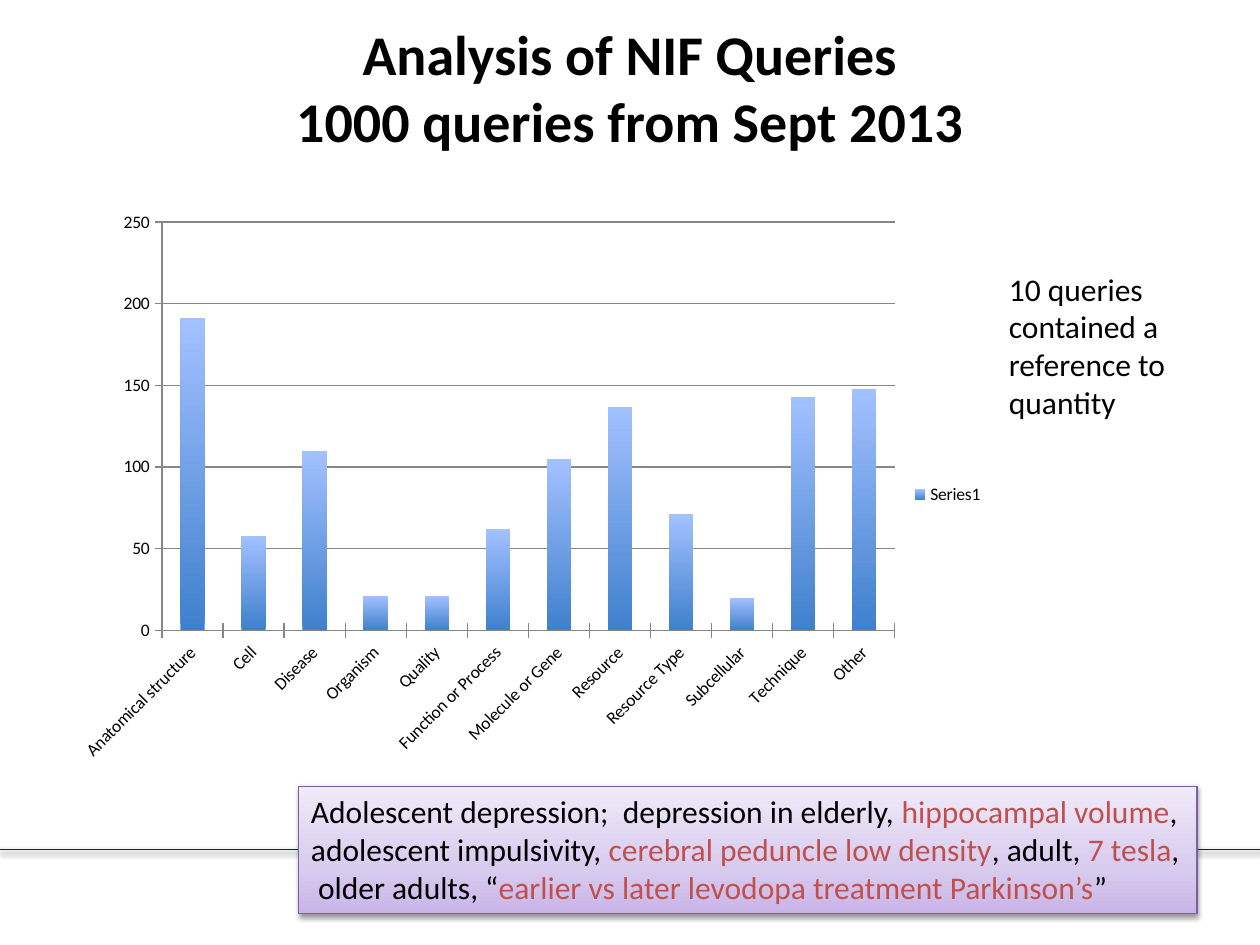
from lxml.etree import SubElement
from pptx import Presentation
from pptx.chart.data import CategoryChartData
from pptx.dml.color import RGBColor
from pptx.enum.chart import XL_CHART_TYPE as ChartType, XL_LEGEND_POSITION as LegendPosition
from pptx.enum.chart import XL_TICK_MARK as TickMark
from pptx.enum.shapes import MSO_CONNECTOR as Connector, MSO_SHAPE as Shape
from pptx.enum.text import MSO_ANCHOR as Anchor, PP_ALIGN as Align
from pptx.oxml import parse_xml
from pptx.oxml.ns import nsdecls, qn
from pptx.util import Cm, Pt

FONT = "Calibri"
COLORS = {"text": "000000", "accent": "C0504D", "rule": "092D33",
          "border": "7D60A0", "grid": "868686"}
BAR_STOPS = [(0, "3F80CD"), (100, "A3C1FF")]
BOX_STOPS = [(0, "C9B5E8"), (35, "D8CBEE"), (100, "F0EAF9")]

TITLE = "Analysis of NIF Queries\v1000 queries from Sept 2013"
NOTE = "10 queries contained a reference to quantity"
EXAMPLES = [
    ("Adolescent depression;  depression in elderly, ", "text"),
    ("hippocampal volume", "accent"),
    (", adolescent impulsivity, ", "text"),
    ("cerebral peduncle low density", "accent"),
    (", adult, ", "text"),
    ("7 tesla", "accent"),
    (",  older adults, “", "text"),
    ("earlier vs later levodopa treatment Parkinson’s", "accent"),
    ("”", "text"),
]
QUERIES = {
    "Anatomical structure": 191, "Cell": 58, "Disease": 110, "Organism": 21,
    "Quality": 21, "Function or Process": 62, "Molecule or Gene": 105,
    "Resource": 137, "Resource Type": 71, "Subcellular": 20,
    "Technique": 143, "Other": 148,
}
PLOT = {"x": 0.106, "y": 0.033, "w": 0.785, "h": 0.7}


def rgb(name):
    return RGBColor.from_string(COLORS[name])


def set_font(font, size, color="text", bold=False):
    formats = {"name": FONT, "size": Pt(size), "bold": bold}
    for attribute, value in formats.items():
        setattr(font, attribute, value)
    font.color.rgb = rgb(color)


def set_line(line, color):
    line.color.rgb = rgb(color)
    line.width = Pt(0.75)


def upward_gradient(stops):
    """Gradient fill whose first stop is at the bottom."""
    marks = "".join(f'<a:gs pos="{position * 1000}"><a:srgbClr val="{color}"/></a:gs>'
                    for position, color in stops)
    return parse_xml(f'<a:gradFill {nsdecls("a")} rotWithShape="1"><a:gsLst>{marks}</a:gsLst>'
                     '<a:lin ang="16200000" scaled="0"/></a:gradFill>')


def add_shadow(properties):
    properties.append(parse_xml(
        f'<a:effectLst {nsdecls("a")}><a:outerShdw blurRad="{Pt(3.1)}" dist="{Pt(1.6)}" '
        'dir="5400000" rotWithShape="0"><a:srgbClr val="000000"><a:alpha val="38000"/>'
        '</a:srgbClr></a:outerShdw></a:effectLst>'))


def write(shape, runs, size, bold=False, align=Align.LEFT, anchor=Anchor.TOP):
    frame = shape.text_frame
    frame.word_wrap = True
    frame.vertical_anchor = anchor
    paragraph = frame.paragraphs[0]
    paragraph.alignment = align
    for index, (text, color) in enumerate(runs):
        for part, line in enumerate(text.split("\v")):
            if part:
                paragraph.add_line_break()
            run = paragraph.add_run()
            run.text = line
            set_font(run.font, size, color, bold)


def add_query_chart(shapes):
    data = CategoryChartData()
    data.categories = list(QUERIES)
    data.add_series("Series1", list(QUERIES.values()))
    chart = shapes.add_chart(ChartType.COLUMN_STACKED, Cm(1.27), Cm(4.09),
                             Cm(18.82), Cm(11.76), data).chart
    set_font(chart.font, 10)
    chart.has_title = False
    chart.has_legend = True
    chart.legend.position = LegendPosition.RIGHT
    chart.legend.include_in_layout = False

    bars = chart.plots[0]
    for attribute, value in {"gap_width": 150, "overlap": 100,
                             "vary_by_categories": False}.items():
        setattr(bars, attribute, value)
    bars.series[0]._element.get_or_add_spPr().append(upward_gradient(BAR_STOPS))

    for axis in (chart.category_axis, chart.value_axis):
        axis.major_tick_mark = TickMark.CROSS
        axis.minor_tick_mark = TickMark.NONE
        set_line(axis.format.line, "grid")
        set_font(axis.tick_labels.font, 10)
    labels = chart.category_axis._element.find(qn("c:txPr")).find(qn("a:bodyPr"))
    labels.set("rot", "-2700000")
    labels.set("vert", "horz")

    counts = chart.value_axis
    counts.minimum_scale, counts.maximum_scale, counts.major_unit = 0, 250, 50
    counts.has_major_gridlines = True
    set_line(counts.major_gridlines.format.line, "grid")

    plot_area = chart._chartSpace.chart.plotArea
    for old in plot_area.findall(qn("c:layout")):
        plot_area.remove(old)
    layout = parse_xml(f'<c:layout {nsdecls("c")}><c:manualLayout/></c:layout>')
    settings = {"layoutTarget": "inner", "xMode": "edge", "yMode": "edge", **PLOT}
    for tag, value in settings.items():
        SubElement(layout[0], qn(f"c:{tag}")).set("val", str(value))
    plot_area.insert(0, layout)


def main():
    deck = Presentation()
    deck.slide_width, deck.slide_height = Cm(25.4), Cm(19.05)
    shapes = deck.slides.add_slide(deck.slide_layouts[6]).shapes

    rule = shapes.add_connector(Connector.STRAIGHT, 0, Cm(17.12), deck.slide_width, Cm(17.12))
    set_line(rule.line, "rule")
    add_shadow(rule._element.spPr)

    title = shapes.add_textbox(Cm(1.27), Cm(0.15), Cm(22.86), Cm(3.18))
    write(title, [(TITLE, "text")], 32, True, Align.CENTER, Anchor.MIDDLE)

    add_query_chart(shapes)

    examples = shapes.add_shape(Shape.RECTANGLE, Cm(6.02), Cm(15.85), Cm(18.11), Cm(2.57))
    properties = examples._element.spPr
    properties.append(upward_gradient(BOX_STOPS))
    set_line(examples.line, "border")
    add_shadow(properties)
    write(examples, EXAMPLES, 18)

    note = shapes.add_textbox(Cm(20.09), Cm(5.31), Cm(5.13), Cm(4.88))
    write(note, [(NOTE, "text")], 18)

    deck.save("out.pptx")


if __name__ == "__main__":
    main()
